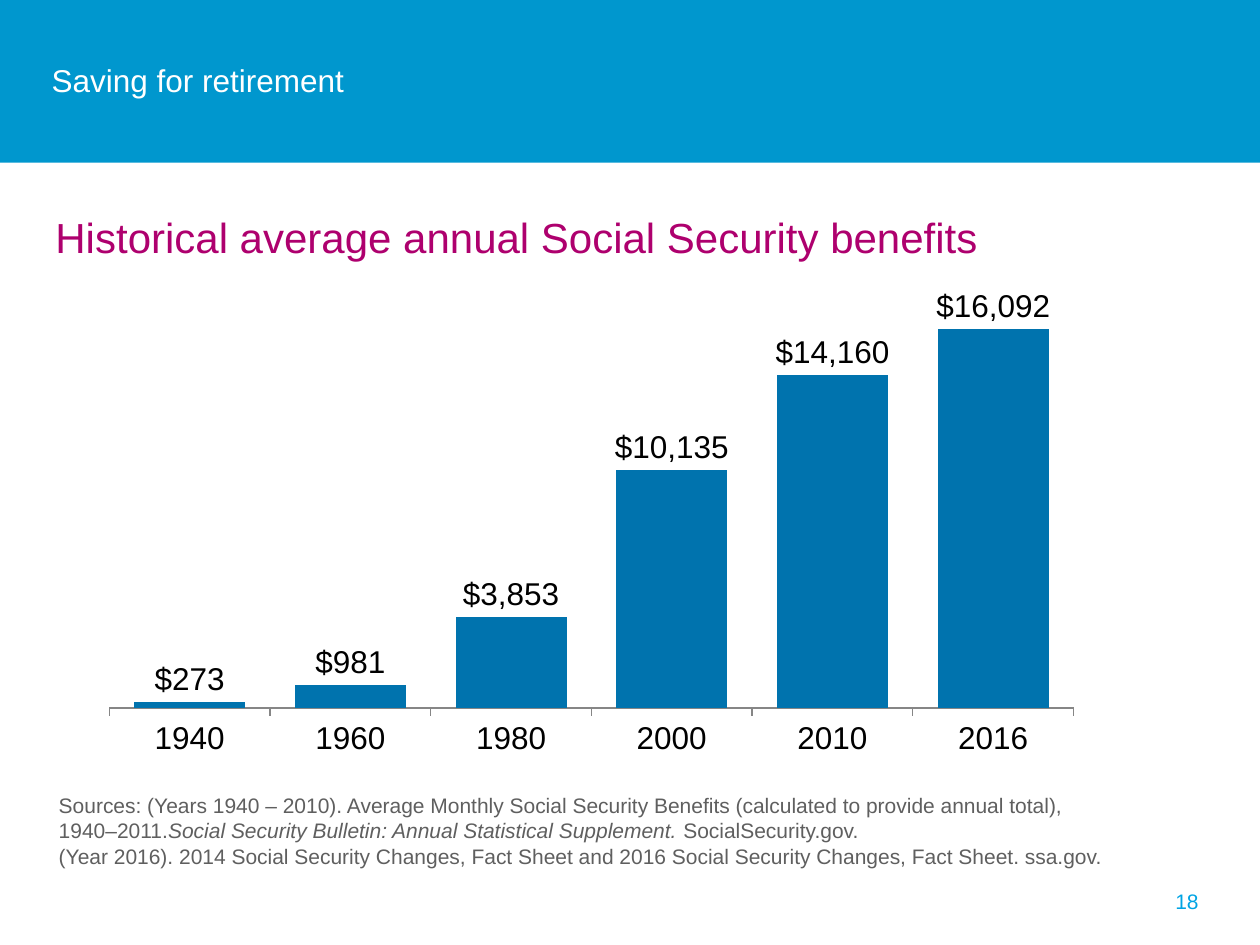
from lxml.etree import SubElement
from pptx import Presentation
from pptx.chart.data import CategoryChartData
from pptx.dml.color import RGBColor
from pptx.enum.chart import XL_CHART_TYPE as Kind, XL_LABEL_POSITION as Spot
from pptx.enum.chart import XL_TICK_LABEL_POSITION as Label, XL_TICK_MARK as Tick
from pptx.enum.shapes import MSO_SHAPE as Form
from pptx.enum.text import MSO_ANCHOR as Anchor, PP_ALIGN as Align
from pptx.oxml.ns import qn
from pptx.util import Pt

SKY = RGBColor(0x00, 0x97, 0xCE)
WHITE = RGBColor(0xFF, 0xFF, 0xFF)
PLUM = RGBColor(0xAE, 0x00, 0x6E)
GREY = RGBColor(0x5F, 0x5F, 0x5F)
CYAN = RGBColor(0x00, 0xA4, 0xE4)
BLUE = RGBColor(0x00, 0x73, 0xAE)
BLACK = RGBColor(0x00, 0x00, 0x00)
AXIS = RGBColor(0x86, 0x86, 0x86)

BENEFITS = {"1940": 273, "1960": 981, "1980": 3853,
            "2000": 10135, "2010": 14160, "2016": 16092}
# Each paragraph is a list of (text, italic); None breaks the line.
SOURCES = [
    [("Sources: (Years 1940 – 2010). Average Monthly Social Security Benefits "
      "(calculated to provide annual total), ", False),
     None,
     ("1940–2011.", False),
     ("Social Security Bulletin: Annual Statistical Supplement. ", True),
     ("SocialSecurity.gov.", False)],
    [("(Year 2016). 2014 Social Security Changes, Fact Sheet and 2016 "
      "Social Security Changes, Fact Sheet. ssa.gov.", False)],
]


def assign(item, values):
    for name, value in values.items():
        setattr(item, name, value)


class Deck:
    """Holds the style and the current slide; all lengths are in points."""
    face = "Arial"

    def __init__(self, wide, high):
        self.show = Presentation()
        self.show.slide_width, self.show.slide_height = Pt(wide), Pt(high)
        self.slide = self.show.slides.add_slide(self.show.slide_layouts[5])
        self.shapes = self.slide.shapes

    def style(self, font, size, color, italic=False):
        assign(font, {"name": self.face, "size": Pt(size), "italic": italic})
        font.color.rgb = color

    def band(self, box, color):
        shape = self.shapes.add_shape(Form.RECTANGLE, *map(Pt, box))
        shape.shadow.inherit = False
        shape.fill.solid()
        shape.fill.fore_color.rgb = color
        shape.line.fill.background()
        # Keep the band behind the title
        self.shapes._spTree.insert(2, shape._element)

    def fill_text(self, shape, paras, size, color, left=7.2, anchor=Anchor.TOP,
                  align=Align.LEFT):
        frame = shape.text_frame
        assign(frame, {"word_wrap": True, "vertical_anchor": anchor,
                       "margin_left": Pt(left), "margin_right": Pt(7.2),
                       "margin_top": Pt(3.6), "margin_bottom": Pt(3.6)})
        for i, parts in enumerate(paras):
            para = frame.add_paragraph() if i else frame.paragraphs[0]
            para.alignment = align
            for part in parts:
                if part is None:
                    para.add_line_break()
                    continue
                run = para.add_run()
                run.text = part[0]
                self.style(run.font, size, color, part[1])

    def title(self, box, words, size, color):
        shape = self.shapes.title
        assign(shape, dict(zip(("left", "top", "width", "height"), map(Pt, box))))
        self.fill_text(shape, [[(words, False)]], size, color, 0, Anchor.MIDDLE)

    def text(self, box, paras, size, color, **rest):
        shape = self.shapes.add_textbox(*map(Pt, box))
        self.fill_text(shape, paras, size, color, **rest)

    def bars(self, box, name, values, color, area):
        """Draw a column chart; area is the inner plot as parts of the chart."""
        data = CategoryChartData(number_format='"$"#,##0')
        data.categories = list(values)
        data.add_series(name, list(values.values()))
        chart = self.shapes.add_chart(Kind.COLUMN_CLUSTERED, *map(Pt, box), data).chart
        assign(chart, {"has_legend": False, "has_title": False})
        self.style(chart.font, 18, BLACK)

        assign(chart.value_axis, {
            "visible": False, "has_major_gridlines": False,
            "minimum_scale": 0, "maximum_scale": 18000})
        years = chart.category_axis
        assign(years, {"major_tick_mark": Tick.OUTSIDE, "minor_tick_mark": Tick.NONE,
                       "tick_label_position": Label.LOW})
        years.format.line.color.rgb = AXIS
        years.format.line.width = Pt(0.75)

        plot = chart.plots[0]
        assign(plot, {"gap_width": 45, "vary_by_categories": False,
                      "has_data_labels": True})
        assign(plot.data_labels, {
            "show_value": True, "position": Spot.OUTSIDE_END,
            "number_format": '"$"#,##0', "number_format_is_linked": False})
        self.style(plot.data_labels.font, 18, BLACK)
        fill = plot.series[0].format.fill
        fill.solid()
        fill.fore_color.rgb = color
        self.place(chart, area)

    def place(self, chart, area):
        region = chart._chartSpace.chart.plotArea
        layout = region.find(qn("c:layout"))
        if layout is None:
            layout = SubElement(region, qn("c:layout"))
            region.insert(0, layout)
        manual = SubElement(layout, qn("c:manualLayout"))
        rules = {"layoutTarget": "inner", "xMode": "edge", "yMode": "edge",
                 **dict(zip("xywh", area))}
        for tag, value in rules.items():
            SubElement(manual, qn("c:" + tag)).set("val", str(value))


def main():
    deck = Deck(720, 540)
    deck.band((0, 0, 720, 93), SKY)
    deck.title((29.5, 28, 663, 35.5), "Saving for retirement", 18, WHITE)
    deck.text((31.7, 117.5, 659.5, 36),
              [[("Historical average annual Social Security benefits", False)]],
              24, PLUM, left=0)
    deck.bars((51, 157, 574, 281.5), "Series 1", BENEFITS, BLUE,
              (0.02, 0.02, 0.96, 0.86))
    deck.text((26.5, 449.5, 631.5, 51), SOURCES, 12, GREY)
    deck.text((524, 500.5, 168, 29), [[("18", False)]], 12, CYAN,
              anchor=Anchor.MIDDLE, align=Align.RIGHT)
    deck.show.save("out.pptx")


if __name__ == "__main__":
    main()
